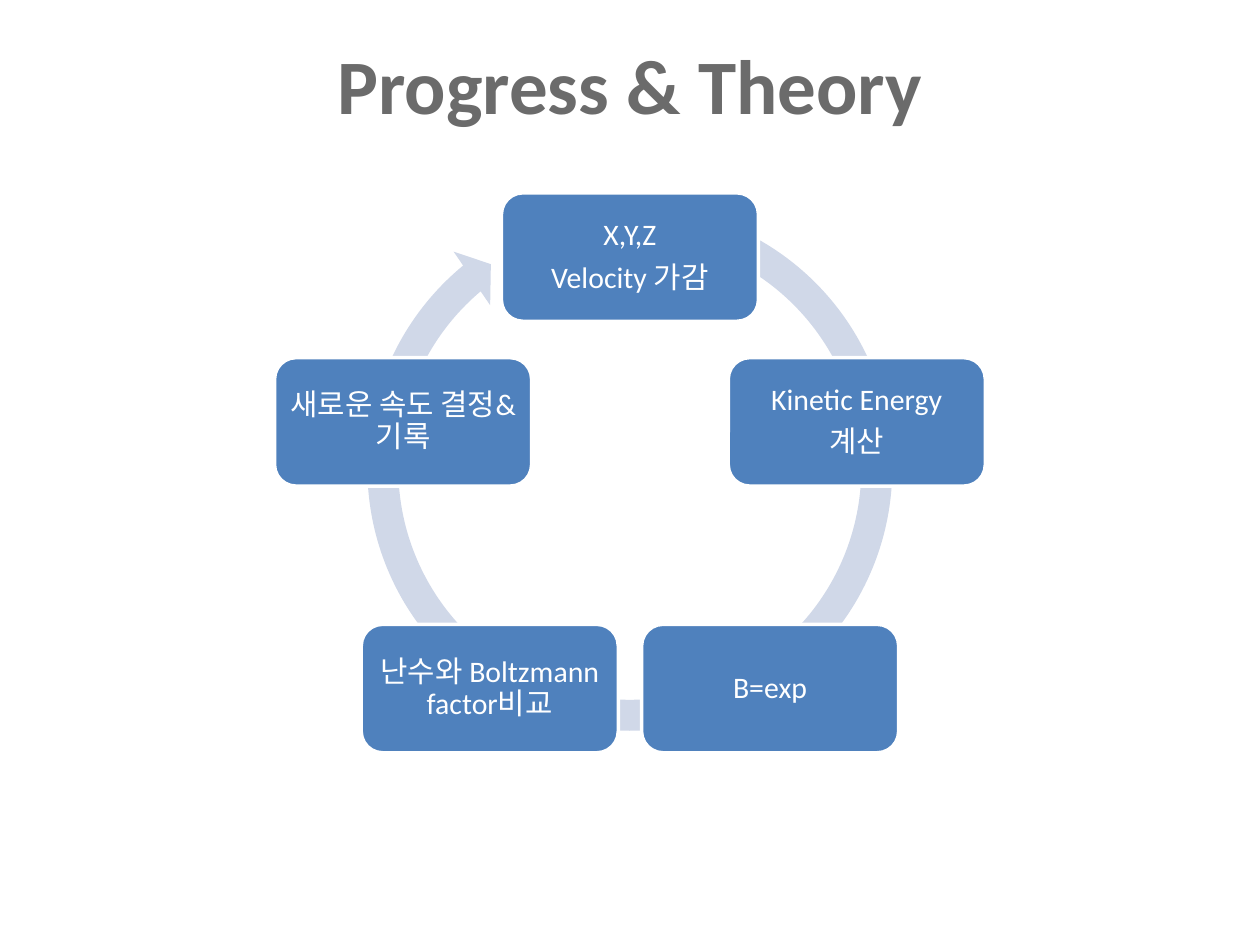
from math import cos, radians, sin

from pptx import Presentation
from pptx.dml.color import RGBColor
from pptx.enum.shapes import MSO_SHAPE
from pptx.enum.text import MSO_ANCHOR, PP_ALIGN
from pptx.util import Pt

GRAY = RGBColor(0x6B, 0x6B, 0x6B)
BLUE = RGBColor(0x4F, 0x81, 0xBD)
PALE_BLUE = RGBColor(0xD0, 0xD8, 0xE8)
WHITE = RGBColor(0xFF, 0xFF, 0xFF)


def write_text(shape, paragraphs, size, color, bold=False, inset=5, line_spacing=1.0, after=0):
    frame = shape.text_frame
    frame.word_wrap = True
    frame.vertical_anchor = MSO_ANCHOR.MIDDLE
    frame.margin_left = frame.margin_right = Pt(inset)
    frame.margin_top = frame.margin_bottom = Pt(inset)
    frame.text = "\n".join(paragraphs)
    for paragraph in frame.paragraphs:
        paragraph.alignment = PP_ALIGN.CENTER
        paragraph.line_spacing = line_spacing
        paragraph.space_after = Pt(after)
        paragraph.font.name = "Calibri"
        paragraph.font.size = Pt(size)
        paragraph.font.bold = bold
        paragraph.font.color.rgb = color


def add_filled(slide, preset, left, top, width, height, fill):
    shape = slide.shapes.add_shape(preset, Pt(left), Pt(top), Pt(width), Pt(height))
    shape.shadow.inherit = False
    shape.fill.solid()
    shape.fill.fore_color.rgb = fill
    shape.line.fill.background()
    return shape


prs = Presentation()
prs.slide_width, prs.slide_height = Pt(720), Pt(540)
slide = prs.slides.add_slide(prs.slide_layouts[6])

title = slide.shapes.add_textbox(Pt(36), Pt(18), Pt(648), Pt(60))
write_text(title, ["Progress & Theory"], size=44, color=GRAY, bold=True)

# Adjustments count in 1/100000, angles in 1/60000 degree: one degree is 0.6
cycle_arrow = add_filled(slide, MSO_SHAPE.CIRCULAR_ARROW, 200.3, 108, 319.3, 319.3, PALE_BLUE)
adjustments = [5.54 / 100, 5.51 * 0.6, 230.25 * 0.6, 289.37 * 0.6, 5.8 / 100]
for index, value in enumerate(adjustments):
    cycle_arrow.adjustments[index] = value

# Steps sit clockwise on a regular pentagon, starting at the top
STEPS = [
    ["X,Y,Z", "Velocity 가감"],
    ["Kinetic Energy", "계산"],
    ["B=exp"],
    ["난수와 Boltzmann factor비교"],
    ["새로운 속도 결정& 기록"],
]
CENTER_X, CENTER_Y, RADIUS = 360, 283.2, 136.3
STEP_W, STEP_H = 146.9, 73.4

for index, lines in enumerate(STEPS):
    angle = radians(360 / len(STEPS) * index)
    left = CENTER_X + RADIUS * sin(angle) - STEP_W / 2
    top = CENTER_Y - RADIUS * cos(angle) - STEP_H / 2
    step = add_filled(slide, MSO_SHAPE.ROUNDED_RECTANGLE, left, top, STEP_W, STEP_H, BLUE)
    step.line.color.rgb = WHITE
    step.line.width = Pt(2)
    write_text(step, lines, size=17, color=WHITE, line_spacing=0.9, after=6)

prs.save("out.pptx")
